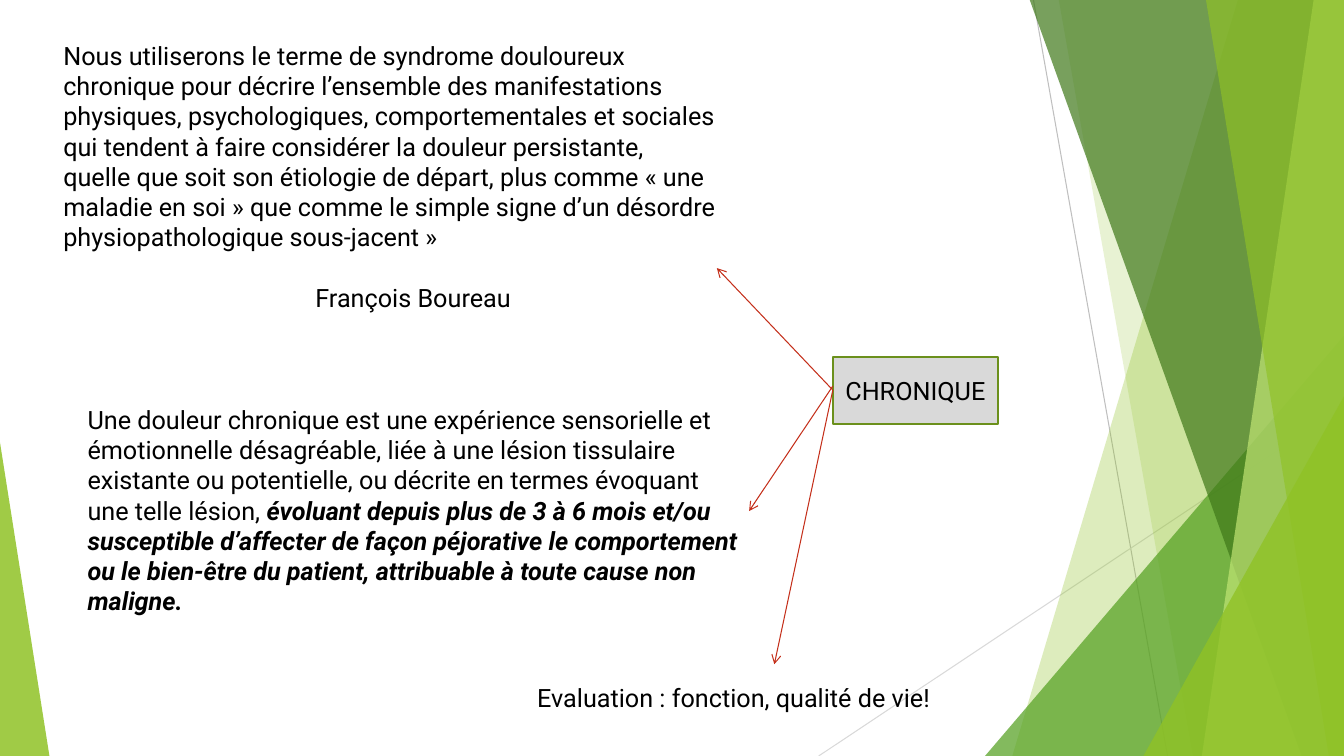
from pptx import Presentation
from pptx.dml.color import RGBColor
from pptx.enum.shapes import MSO_CONNECTOR, MSO_SHAPE
from pptx.enum.text import MSO_ANCHOR, PP_ALIGN
from pptx.oxml.ns import qn
from pptx.util import Inches, Pt
from lxml.etree import SubElement

COLORS = {
    "lime": "90C226", "green": "54A021", "dark": "3F7819", "pale": "C0E474",
    "gray": "BFBFBF", "light": "D9D9D9", "border": "6B901C", "red": "C42F1A",
    "black": "000000",
}
WIDTH, HEIGHT = 13.33, 7.5

prs = Presentation()
prs.slide_width, prs.slide_height = Inches(WIDTH), Inches(HEIGHT)
s = prs.slides.add_slide(prs.slide_layouts[6])


def add_line(start, end, color, arrow=False):
    line = s.shapes.add_connector(
        MSO_CONNECTOR.STRAIGHT, *[Inches(v) for v in start + end])
    line.line.color.rgb = RGBColor.from_string(COLORS[color])
    line.line.width = Pt(0.75)
    if arrow:
        SubElement(line.line._get_or_add_ln(), qn("a:tailEnd"), type="arrow")
    SubElement(line._element.spPr, qn("a:effectLst"))


def style_text(p):
    p.font.name = "Roboto"
    p.font.size = Pt(18)
    p.font.color.rgb = RGBColor.from_string(COLORS["black"])


add_line((10.25, 0), (11.58, HEIGHT), "gray")
add_line((WIDTH, 4.03), (8.12, HEIGHT), "light")

facets = [
    ("panel", (12.28, 10.04), "lime", 30),
    ("panel", (10.5, 11.83), "lime", 20),
    ("triangle", (9.77, 3.33, 3.56, 1), "green", 72),
    ("panel", (10.21, 12.91), "dark", 70),
    ("panel", (13.03, 11.92), "pale", 70),
    ("panel", (11.96, 13.18), "lime", 65),
    ("triangle", (11.34, 3.93, 1.99, 1), "lime", 80),
    ("triangle", (0, 4.39, 0.49, 0), "lime", 85),
]
for kind, place, color, opacity in facets:
    if kind == "panel":
        top_x, bottom_x = place
        outline = s.shapes.build_freeform(Inches(top_x), Inches(-0.01))
        corners = [(WIDTH, -0.01), (WIDTH, HEIGHT), (bottom_x, HEIGHT)]
        outline.add_line_segments([(Inches(x), Inches(y)) for x, y in corners])
        sp = outline.convert_to_shape()
    else:
        left, top, width, apex = place
        sp = s.shapes.add_shape(
            MSO_SHAPE.ISOSCELES_TRIANGLE, Inches(left), Inches(top),
            Inches(width), Inches(HEIGHT - top))
        sp.adjustments[0] = apex
    sp.shadow.inherit = False
    sp.line.fill.background()
    sp.fill.solid()
    sp.fill.fore_color.rgb = RGBColor.from_string(COLORS[color])
    rgb = sp._element.spPr.find(qn("a:solidFill"))[0]
    SubElement(rgb, qn("a:alpha"), val=str(opacity * 1000))

sp = s.shapes.add_shape(
    MSO_SHAPE.RECTANGLE, Inches(8.26), Inches(3.54), Inches(1.64), Inches(0.67))
sp.shadow.inherit = False
sp.fill.solid()
sp.fill.fore_color.rgb = RGBColor.from_string(COLORS["light"])
sp.line.color.rgb = RGBColor.from_string(COLORS["border"])
sp.line.width = Pt(1.5)
tf = sp.text_frame
tf.vertical_anchor = MSO_ANCHOR.MIDDLE
p = tf.paragraphs[0]
p.text = "CHRONIQUE"
p.alignment = PP_ALIGN.CENTER
style_text(p)

texts = [
    (0.53, 0.35, 2.83, [
        ["Nous utiliserons le terme de syndrome douloureux chronique pour décrire "
         "l’ensemble des manifestations physiques, psychologiques, comportementales "
         "et sociales qui tendent à faire considérer la douleur persistante, quelle "
         "que soit son étiologie de départ, plus comme « une maladie en soi » que "
         "comme le simple signe d’un désordre physiopathologique sous-jacent »"],
        ["François Boureau"]]),
    (0.77, 3.96, 2.22, [
        ["Une douleur chronique est une expérience sensorielle et émotionnelle "
         "désagréable, liée à une lésion tissulaire existante ou potentielle, ou "
         "décrite en termes évoquant une telle lésion, ",
         "évoluant depuis plus de 3 à 6 mois et/ou susceptible d’affecter de façon "
         "péjorative le comportement ou le bien-être du patient, attribuable à toute "
         "cause non maligne."]]),
    (5.23, 6.72, 0.4, [["Evaluation : fonction, qualité de vie!"]]),
]
for left, top, height, paragraphs in texts:
    tf = s.shapes.add_textbox(
        Inches(left), Inches(top), Inches(6.67), Inches(height)).text_frame
    tf.word_wrap = True
    for i, runs in enumerate(paragraphs):
        p = tf.add_paragraph() if i else tf.paragraphs[0]
        style_text(p)
        for j, text in enumerate(runs):
            r = p.add_run()
            r.text = text
            if j:
                r.font.bold = r.font.italic = True
        if i:
            p.space_before = Pt(21.5)
            p._p.get_or_add_pPr().set("marL", str(Inches(2.5)))

for start_y, target in [(3.87, (7.11, 2.66)), (3.83, (7.43, 5.07)), (3.87, (7.68, 6.59))]:
    add_line((8.26, start_y), target, "red", arrow=True)

prs.save("out.pptx")
